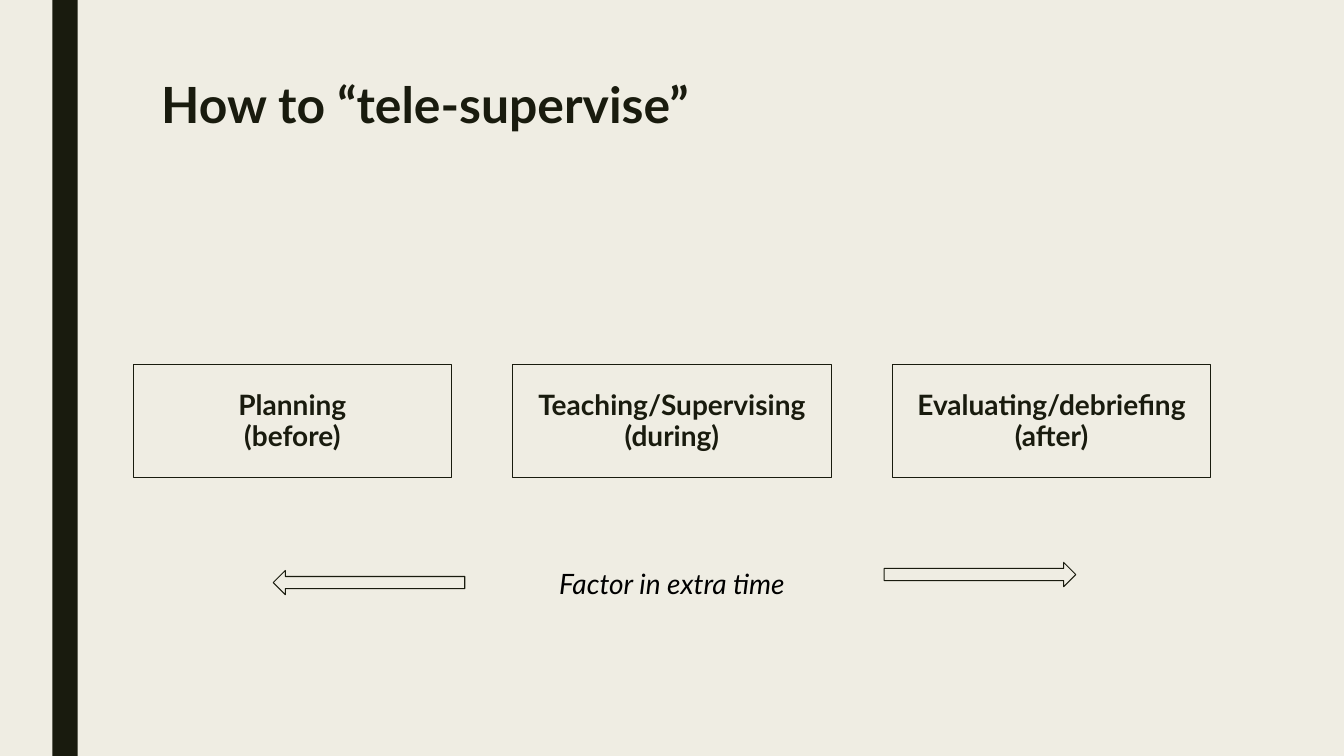
from pptx import Presentation
from pptx.dml.color import RGBColor
from pptx.enum.shapes import MSO_SHAPE as Shape
from pptx.enum.text import MSO_ANCHOR as Anchor, PP_ALIGN as Align
from pptx.util import Inches, Pt

PAPER = RGBColor(0xEF, 0xED, 0xE3)
INK = RGBColor(0x19, 0x1B, 0x0E)
BLACK = RGBColor(0, 0, 0)

SLIDE_WIDTH, SLIDE_HEIGHT = 13.33, 7.5
STAGE_LEFT, STAGE_TOP, STAGE_PITCH = 1.32, 3.62, 3.765
STAGE_WIDTH, STAGE_HEIGHT = 3.16, 1.12
ARROW_WIDTH, ARROW_HEIGHT = 1.9, 0.24


def add_outlined(kind, left, top, width, height, fill=PAPER):
    """Add a flat preset shape with a thin dark outline."""
    shape = slide.shapes.add_shape(
        kind, Inches(left), Inches(top), Inches(width), Inches(height))
    shape.shadow.inherit = False
    shape.fill.solid()
    shape.fill.fore_color.rgb = fill
    shape.line.color.rgb = INK
    shape.line.width = Pt(0.75)
    return shape


def write(shape, lines, margin, anchor, align, spacing, **font_format):
    """Fill a shape with one paragraph per line, all in the same format."""
    frame = shape.text_frame
    frame.word_wrap = True
    frame.vertical_anchor = anchor
    frame.margin_left = frame.margin_right = Inches(0.1)
    frame.margin_top = frame.margin_bottom = Inches(margin)
    color = font_format.pop("color")
    frame.text = "\n".join(lines)
    for paragraph in frame.paragraphs:
        paragraph.alignment = align
        paragraph.line_spacing = spacing
        font = paragraph.runs[0].font
        font.name = "Lato"
        font.color.rgb = color
        for name, value in font_format.items():
            setattr(font, name, value)


presentation = Presentation()
presentation.slide_width = Inches(SLIDE_WIDTH)
presentation.slide_height = Inches(SLIDE_HEIGHT)
slide = presentation.slides.add_slide(presentation.slide_layouts[6])
slide.background.fill.solid()
slide.background.fill.fore_color.rgb = PAPER

side_bar = add_outlined(Shape.RECTANGLE, 0.52, 0, 0.25, SLIDE_HEIGHT, INK)
side_bar.line.fill.background()

title = slide.shapes.add_textbox(Inches(1.5), Inches(0.75), Inches(10.5), Inches(1.62))
write(title, ["How to “tele-supervise”"], 0.05, Anchor.TOP, Align.LEFT, 0.89,
      size=Pt(35.6), bold=True, color=INK)

stages = [
    ("Planning", "(before)"),
    ("Teaching/Supervising", "(during)"),
    ("Evaluating/debriefing", "(after)"),
]
for column, lines in enumerate(stages):
    stage = add_outlined(Shape.RECTANGLE, STAGE_LEFT + column * STAGE_PITCH,
                         STAGE_TOP, STAGE_WIDTH, STAGE_HEIGHT)
    write(stage, lines, 0.1, Anchor.MIDDLE, Align.CENTER, 0.94,
          size=Pt(20), bold=True, color=INK)

time_note = slide.shapes.add_textbox(Inches(2.02), Inches(5.52), Inches(9.29), Inches(0.54))
write(time_note, ["Factor in extra time"], 0.1, Anchor.TOP, Align.CENTER, 1.0,
      size=Pt(20), italic=True, color=BLACK)

for kind, left, top in [(Shape.RIGHT_ARROW, 8.77, 5.58), (Shape.LEFT_ARROW, 2.71, 5.66)]:
    add_outlined(kind, left, top, ARROW_WIDTH, ARROW_HEIGHT)

presentation.save("out.pptx")
